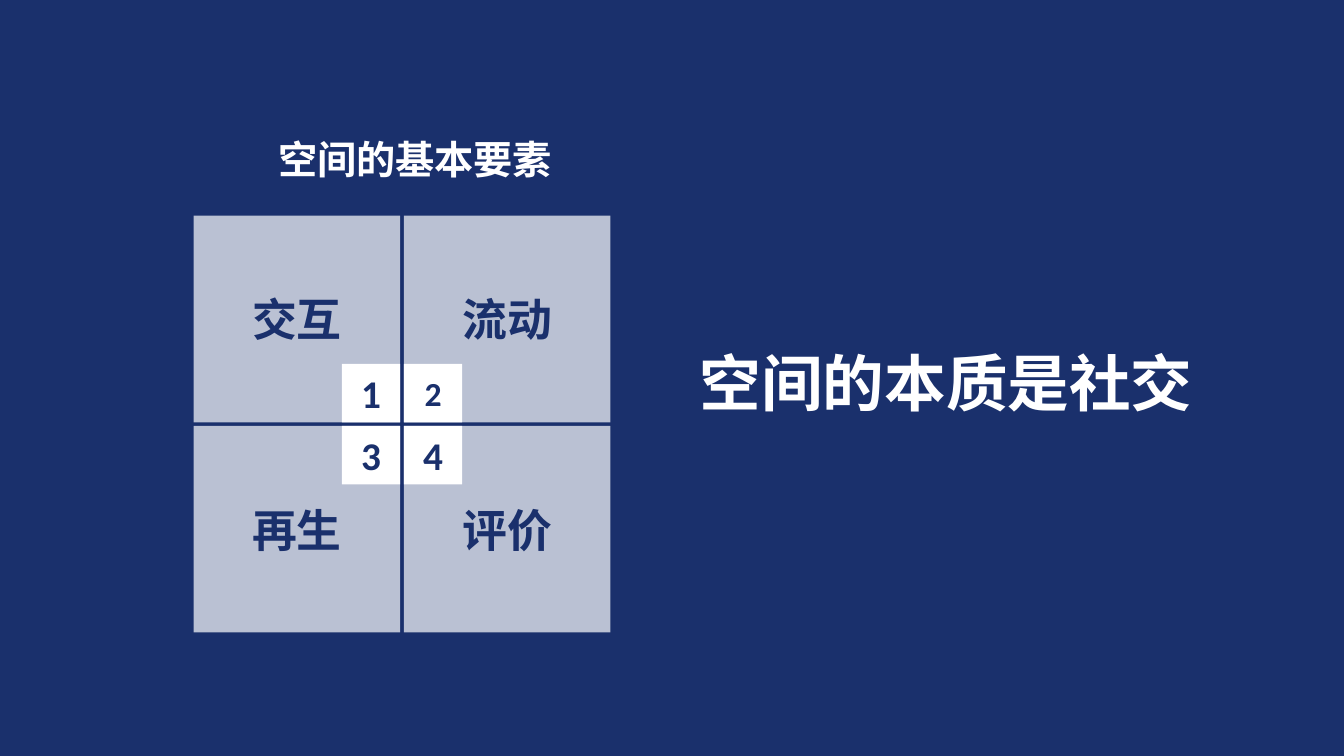
"""Build a slide on the four basic elements of space."""
from lxml import etree
from pptx import Presentation
from pptx.dml.color import RGBColor
from pptx.enum import shapes, text
from pptx.oxml import ns
from pptx.util import Inches, Pt

COLORS = {"navy": "1A306C", "white": "FFFFFF"}
LATIN = "Calibri"
CJK = "Noto Sans CJK SC"
LEFT, TOP = 1.92, 2.14
TILE, BADGE, PITCH = 2.05, 0.58, 2.085
ELEMENTS = [("交互", 28), ("流动", 24), ("再生", 28), ("评价", 28)]


def color(name):
    return RGBColor.from_string(COLORS[name])


def write(shape, content, size, font, ink):
    """Fill a shape with one bold line of text."""
    tf = shape.text_frame
    tf.text = content
    p = tf.paragraphs[0]
    r = p.runs[0]
    r.font.size = Pt(size)
    r.font.name = font
    r.font.bold = True
    r.font.color.rgb = color(ink)
    etree.SubElement(r.font._element, ns.qn("a:ea"), typeface=CJK)
    return p


def add_heading(s, content, left, top, width, height, size):
    sp = s.shapes.add_textbox(*map(Inches, (left, top, width, height)))
    sp.text_frame.word_wrap = True
    write(sp, content, size, LATIN, "white")


def add_square(s, content, left, top, side, size, font, alpha=None):
    """Add a white square with centred navy text."""
    sp = s.shapes.add_shape(
        shapes.MSO_SHAPE.RECTANGLE, *map(Inches, (left, top, side, side)))
    sp.shadow.inherit = False
    sp.fill.solid()
    sp.fill.fore_color.rgb = color("white")
    sp.line.fill.background()
    if alpha:
        fill = sp._element.spPr.find(ns.qn("a:solidFill"))
        etree.SubElement(fill[0], ns.qn("a:alpha"), val=str(alpha * 1000))
    sp.text_frame.vertical_anchor = text.MSO_ANCHOR.MIDDLE
    p = write(sp, content, size, font, "navy")
    p.alignment = text.PP_ALIGN.CENTER


def add_matrix(s):
    """Add the four tiles, then the numbered squares at their inner corners."""
    for i, (label, _) in enumerate(ELEMENTS):
        row, col = divmod(i, 2)
        add_square(s, label, LEFT + col * PITCH, TOP + row * PITCH,
                   TILE, 32, CJK, alpha=70)
    inset = TILE - BADGE
    for i, (_, size) in enumerate(ELEMENTS):
        row, col = divmod(i, 2)
        add_square(s, str(i + 1),
                   LEFT + (PITCH if col else inset),
                   TOP + (PITCH if row else inset), BADGE, size, LATIN)


def main():
    prs = Presentation()
    prs.slide_width, prs.slide_height = Inches(13.33), Inches(7.5)
    s = prs.slides.add_slide(prs.slide_layouts[6])
    s.background.fill.solid()
    s.background.fill.fore_color.rgb = color("navy")
    add_heading(s, "空间的基本要素", 2.66, 1.29, 3.84, 0.57, 28)
    add_matrix(s)
    add_heading(s, "空间的本质是社交", 6.84, 3.37, 5.22, 0.84, 44)
    prs.save("out.pptx")


if __name__ == "__main__":
    main()
